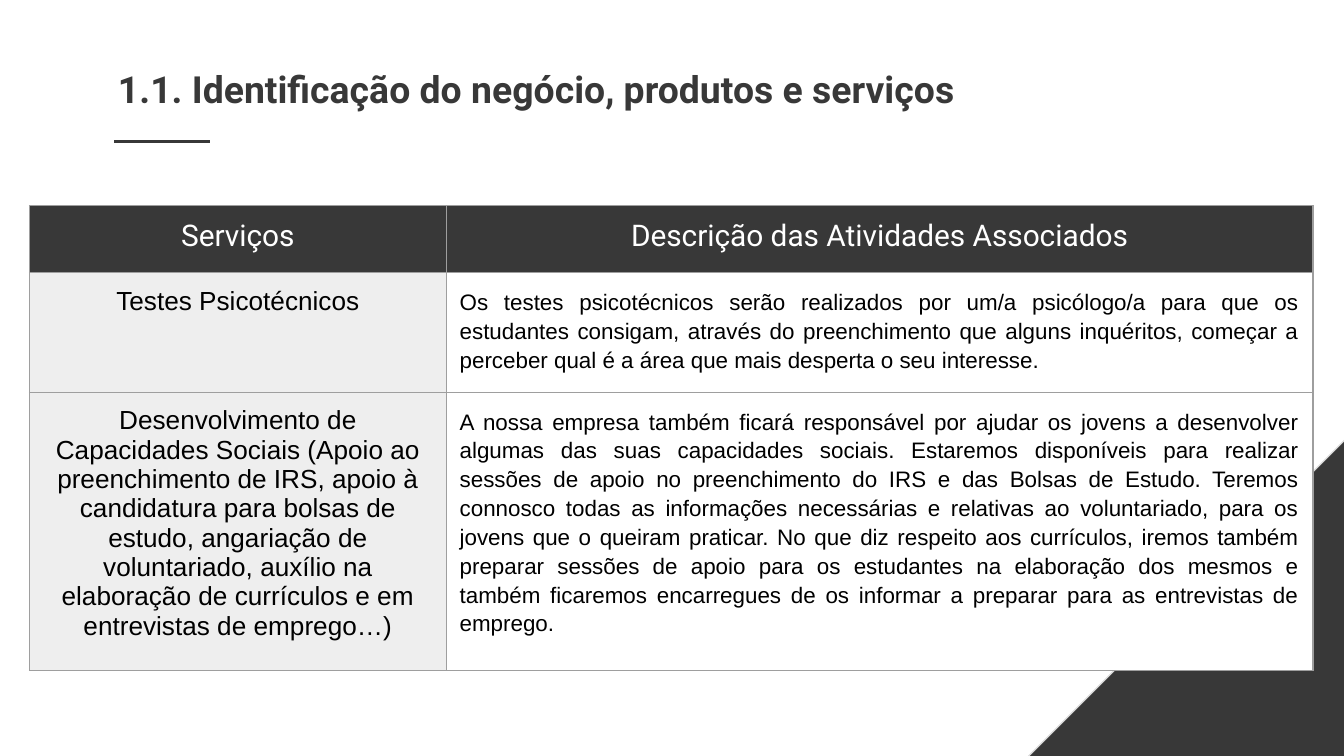
from dataclasses import dataclass

from lxml import etree
from pptx import Presentation, util as u
from pptx.dml.color import RGBColor
from pptx.enum import shapes, text
from pptx.oxml import ns

Inches, Pt = u.Inches, u.Pt


@dataclass(frozen=True)
class Theme:
    dark: str = "383838"
    light: str = "EEEEEE"
    white: str = "FFFFFF"
    black: str = "000000"
    edge: str = "DBDBDB"
    grid: str = "9E9E9E"
    heading_font: str = "Roboto"
    body_font: str = "Arial"
    title: int = 20
    header: int = 16
    service: int = 14
    detail: int = 12
    inset: float = 0.1
    spacing: float = 1.15


T = Theme()

HEADERS = ("Serviços", "Descrição das Atividades Associados")
SERVICES = (
    ("Testes Psicotécnicos",
     "Os testes psicotécnicos serão realizados por um/a psicólogo/a para que os "
     "estudantes consigam, através do preenchimento que alguns inquéritos, começar a "
     "perceber qual é a área que mais desperta o seu interesse."),
    ("Desenvolvimento de Capacidades Sociais (Apoio ao preenchimento de IRS, apoio à "
     "candidatura para bolsas de estudo, angariação de voluntariado, auxílio na "
     "elaboração de currículos e em entrevistas de emprego…)",
     "A nossa empresa também ficará responsável por ajudar os jovens a desenvolver "
     "algumas das suas capacidades sociais. Estaremos disponíveis para realizar sessões "
     "de apoio no preenchimento do IRS e das Bolsas de Estudo. Teremos connosco todas as "
     "informações necessárias e relativas ao voluntariado, para os jovens que o queiram "
     "praticar. No que diz respeito aos currículos, iremos também preparar sessões de "
     "apoio para os estudantes na elaboração dos mesmos e também ficaremos encarregues "
     "de os informar a preparar para as entrevistas de emprego."),
)


def rgb(color):
    return RGBColor.from_string(color)


def write(tf, words, font, size, color, align, spacing=None, bold=False):
    tf.word_wrap = True
    p = tf.paragraphs[0]
    p.text, p.alignment = words, align
    if spacing:
        p.line_spacing = spacing
    p.font.name, p.font.size, p.font.bold = font, Pt(size), bold
    p.font.color.rgb = rgb(color)


def set_insets(box):
    box.margin_left = box.margin_right = Inches(T.inset)
    box.margin_top = box.margin_bottom = Inches(T.inset)


def set_borders(cell):
    tcPr = cell._tc.get_or_add_tcPr()
    for side in ("lnL", "lnR", "lnT", "lnB"):
        ln = etree.SubElement(tcPr, ns.qn(f"a:{side}"), w=str(Pt(0.75)))
        fill = etree.SubElement(ln, ns.qn("a:solidFill"))
        etree.SubElement(fill, ns.qn("a:srgbClr"), val=T.grid)


def add_corner(s, x, y, size):
    """Place a right triangle with its square corner at the bottom right."""
    sp = s.shapes.add_shape(shapes.MSO_SHAPE.RIGHT_TRIANGLE,
                            Inches(x), Inches(y), Inches(size), Inches(size))
    sp._element.spPr.xfrm.set("flipH", "1")
    sp.shadow.inherit = False
    sp.fill.solid()
    sp.fill.fore_color.rgb = rgb(T.dark)
    sp.line.color.rgb = rgb(T.edge)
    sp.line.width = Pt(0.75)


def add_heading(s, x, y, w, h):
    """Place the title and the short rule below it."""
    sp = s.shapes.add_textbox(Inches(x), Inches(y), Inches(w), Inches(h))
    set_insets(sp.text_frame)
    write(sp.text_frame, "1.1. Identificação do negócio, produtos e serviços",
          T.heading_font, T.title, T.dark, text.PP_ALIGN.LEFT, T.spacing, bold=True)

    left, top = Inches(x + 0.07), Inches(y + 0.71)
    rule = s.shapes.add_connector(shapes.MSO_CONNECTOR.STRAIGHT,
                                  left, top, left + Inches(0.71), top)
    rule.line.color.rgb = rgb(T.dark)
    rule.line.width = Pt(1.5)
    etree.SubElement(rule._element.spPr, ns.qn("a:effectLst"))


def add_services(s, x, y, h, widths, heights):
    """Place the table; its rows start at the given heights and grow with their text."""
    frame = s.shapes.add_table(len(heights), len(widths), Inches(x), Inches(y),
                               Inches(sum(widths)), Inches(h))
    table = frame.table
    for column, width in zip(table.columns, widths):
        column.width = Inches(width)
    for row, height in zip(table.rows, heights):
        row.height = Inches(height)
    frame.height = Inches(h)

    center, justify = text.PP_ALIGN.CENTER, text.PP_ALIGN.JUSTIFY
    header = (T.dark, T.heading_font, T.header, T.white, center)
    body = ((T.light, T.body_font, T.service, T.black, center),
            (T.white, T.body_font, T.detail, T.black, justify, T.spacing))
    for r, row in enumerate((HEADERS, *SERVICES)):
        for c, words in enumerate(row):
            cell = table.cell(r, c)
            fill, *style = body[c] if r else header
            set_insets(cell)
            set_borders(cell)
            cell.fill.solid()
            cell.fill.fore_color.rgb = rgb(fill)
            write(cell.text_frame, words, *style)


def main():
    prs = Presentation()
    prs.slide_width = Inches(10)
    prs.slide_height = prs.slide_width * 9 // 16
    s = prs.slides.add_slide(prs.slide_layouts[6])
    add_corner(s, 6.35, 1.68, 5.25)
    add_heading(s, 0.78, 0.34, 8.86, 0.58)
    add_services(s, 0.22, 1.53, 3.44, widths=(3.1, 6.45), heights=(0.5, 0.56, 0.56))
    prs.save("out.pptx")


if __name__ == "__main__":
    main()
